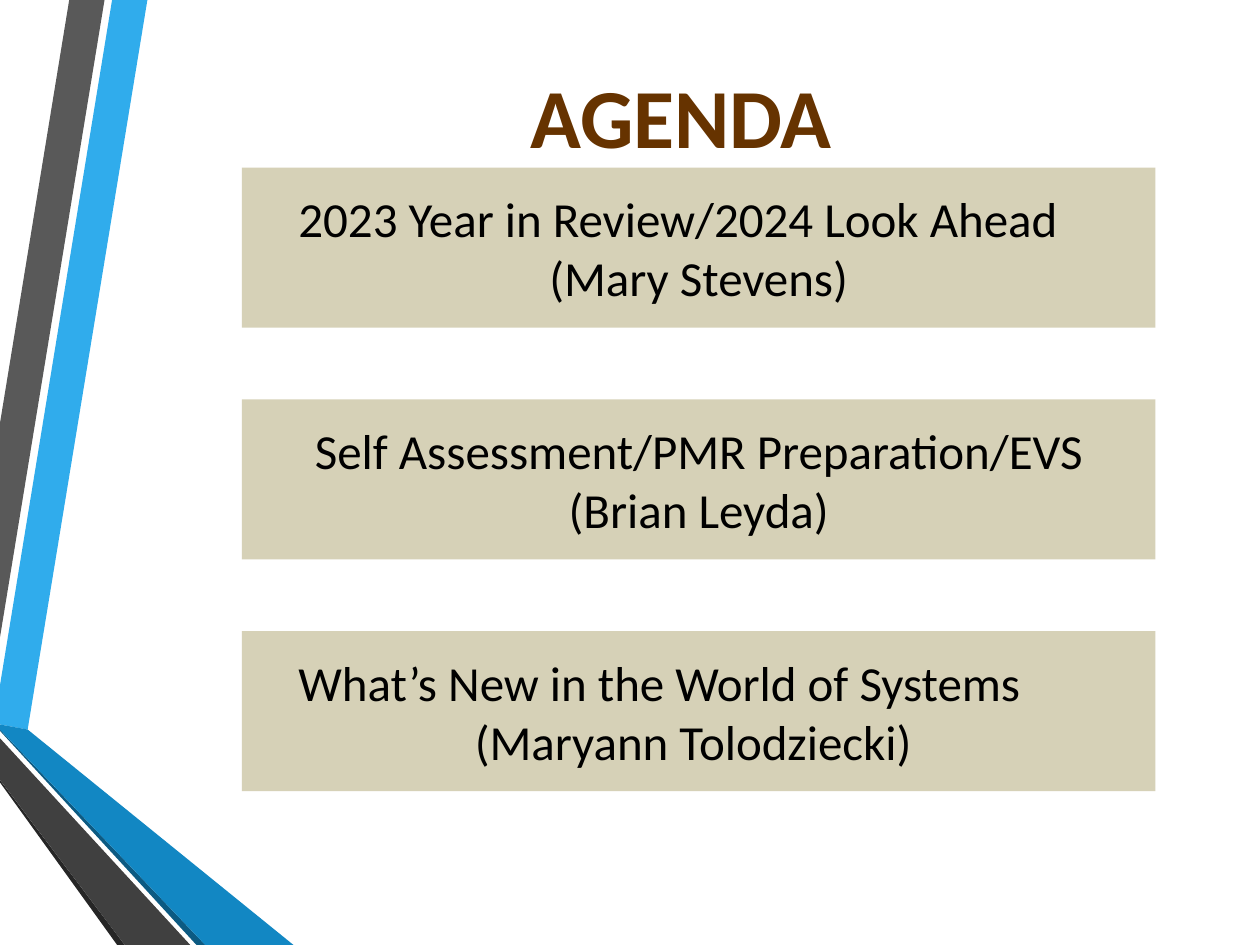
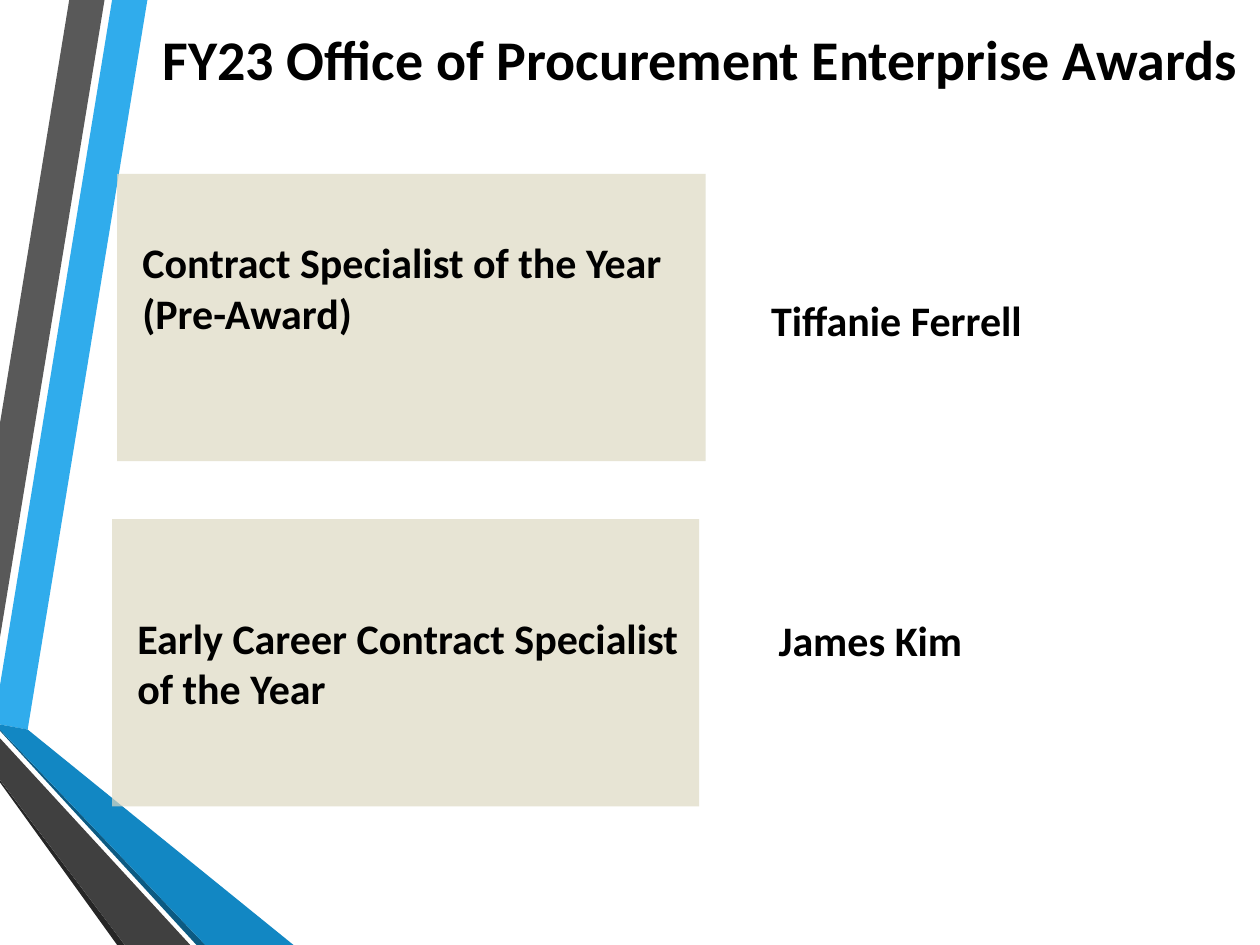
from lxml.etree import SubElement
from pptx import Presentation
from pptx.dml.color import RGBColor
from pptx.enum.shapes import MSO_SHAPE as SHAPE
from pptx.enum.text import MSO_ANCHOR as ANCHOR, MSO_AUTO_SIZE as FIT, PP_ALIGN as ALIGN
from pptx.oxml.ns import qn
from pptx.util import Inches, Pt

FONT = "Calibri"
COLORS = {
    "sky": "30ACEC",
    "gray": "595959",
    "charcoal": "262626",
    "navy": "0C5A82",
    "blue": "1287C3",
    "slate": "404040",
    "brown": "663300",
    "black": "000000",
    "tan": "C4BD97",
    "sand": "DDD9C3",
}
RIBBONS = [
    ("sky", [(0, 5.44), (0, 5.75), (0.22, 5.79), (1.17, 0), (0.89, 0)]),
    ("gray", [(0.83, 0), (0.55, 0), (0, 3.36), (0, 5.06)]),
    ("charcoal", [(0, 6.19), (0, 6.21), (0.93, 7.5), (0.99, 7.5)]),
    ("navy", [(0, 5.79), (0, 5.8), (1.56, 7.5), (1.63, 7.5)]),
    ("blue", [(0, 5.79), (1.63, 7.5), (2.33, 7.5), (0.22, 5.79), (0, 5.75)]),
    ("slate", [(0, 6.19), (0.99, 7.5), (1.51, 7.5), (0, 5.86)]),
]
AGENDA = [
    ("2023 Year in Review/2024 Look Ahead", "(Mary Stevens)", ALIGN.LEFT),
    ("Self Assessment/PMR Preparation/EVS", "(Brian Leyda)", ALIGN.CENTER),
    ("What’s New in the World of Systems", "(Maryann Tolodziecki) ", ALIGN.LEFT),
]
AWARDS = [
    ("Contract Specialist of the Year (Pre-Award)", (0.93, 1.38, 4.67, 2.28), 0.48,
     "Tiffanie Ferrell", (5.12, 1.86, 4.57, 1.36)),
    ("Early Career Contract Specialist of the Year", (0.89, 4.12, 4.66, 2.28), 0,
     "James Kim", (5.18, 3.82, 4.56, 2.52)),
]


def rgb(name):
    return RGBColor.from_string(COLORS[name])


def paint(sp, color, opacity=100):
    sp.shadow.inherit = False
    sp.fill.solid()
    sp.fill.fore_color.rgb = rgb(color)
    sp.line.fill.background()
    if opacity < 100:
        clr = sp.element.spPr.find(qn("a:solidFill"))[0]
        SubElement(clr, qn("a:alpha")).set("val", str(opacity * 1000))


def add_ribbons(slide):
    for color, points in RIBBONS:
        (x, y), *rest = [(Inches(px), Inches(py)) for px, py in points]
        builder = slide.shapes.build_freeform(x, y)
        builder.add_line_segments(rest, close=True)
        paint(builder.convert_to_shape(), color)


def set_frame(sp, left=0, top=0, right=0, bottom=0):
    tf = sp.text_frame
    tf.word_wrap = True
    tf.auto_size = FIT.NONE
    tf.vertical_anchor = ANCHOR.MIDDLE
    tf.margin_left, tf.margin_top = Inches(left), Inches(top)
    tf.margin_right, tf.margin_bottom = Inches(right), Inches(bottom)
    return tf


def write(p, text, size, color="black", bold=False, align=ALIGN.LEFT):
    p.alignment = align
    r = p.add_run()
    r.text = text
    r.font.name = FONT
    r.font.size = Pt(size)
    r.font.bold = bold
    r.font.color.rgb = rgb(color)


def add_titled_slide(prs, text, box, size, color="black"):
    slide = prs.slides.add_slide(prs.slide_layouts.get_by_name("Title Only"))
    add_ribbons(slide)
    sp = slide.shapes.title
    sp.left, sp.top, sp.width, sp.height = map(Inches, box)
    write(set_frame(sp).paragraphs[0], text, size, color, True, ALIGN.CENTER)
    return slide


def add_panel(slide, box, color, opacity):
    sp = slide.shapes.add_shape(SHAPE.RECTANGLE, *map(Inches, box))
    paint(sp, color, opacity)
    return sp


def add_agenda_item(slide, top, topic, speaker, align):
    sp = add_panel(slide, (1.92, top, 7.25, 1.27), "tan", 69)
    tf = set_frame(sp, 0.1, 0.05, 0.1, 0.05)
    p = tf.paragraphs[0]
    write(p, topic, 28, align=align)
    if align == ALIGN.LEFT:
        p._p.get_or_add_pPr().set("marL", str(Inches(0.35)))
    write(tf.add_paragraph(), speaker, 28, align=ALIGN.CENTER)


def add_award(slide, award, award_box, lift, winner, winner_box):
    sp = add_panel(slide, award_box, "sand", 70)
    tf = set_frame(sp, left=0.2, bottom=lift)
    write(tf.paragraphs[0], award, 24, bold=True)
    tb = slide.shapes.add_textbox(*map(Inches, winner_box))
    write(set_frame(tb, left=1).paragraphs[0], winner, 24, bold=True)


def main():
    prs = Presentation()
    prs.slide_width, prs.slide_height = Inches(10), Inches(7.5)

    agenda = add_titled_slide(prs, "AGENDA", (2.53, 0.3, 5.75, 1.23), 48, "brown")
    for i, item in enumerate(AGENDA):
        add_agenda_item(agenda, 1.33 + 1.84 * i, *item)

    awards = add_titled_slide(prs, "FY23 Office of Procurement Enterprise Awards",
                              (1.16, 0.09, 8.8, 0.74), 32)
    for item in AWARDS:
        add_award(awards, *item)

    prs.save("out.pptx")


if __name__ == "__main__":
    main()
